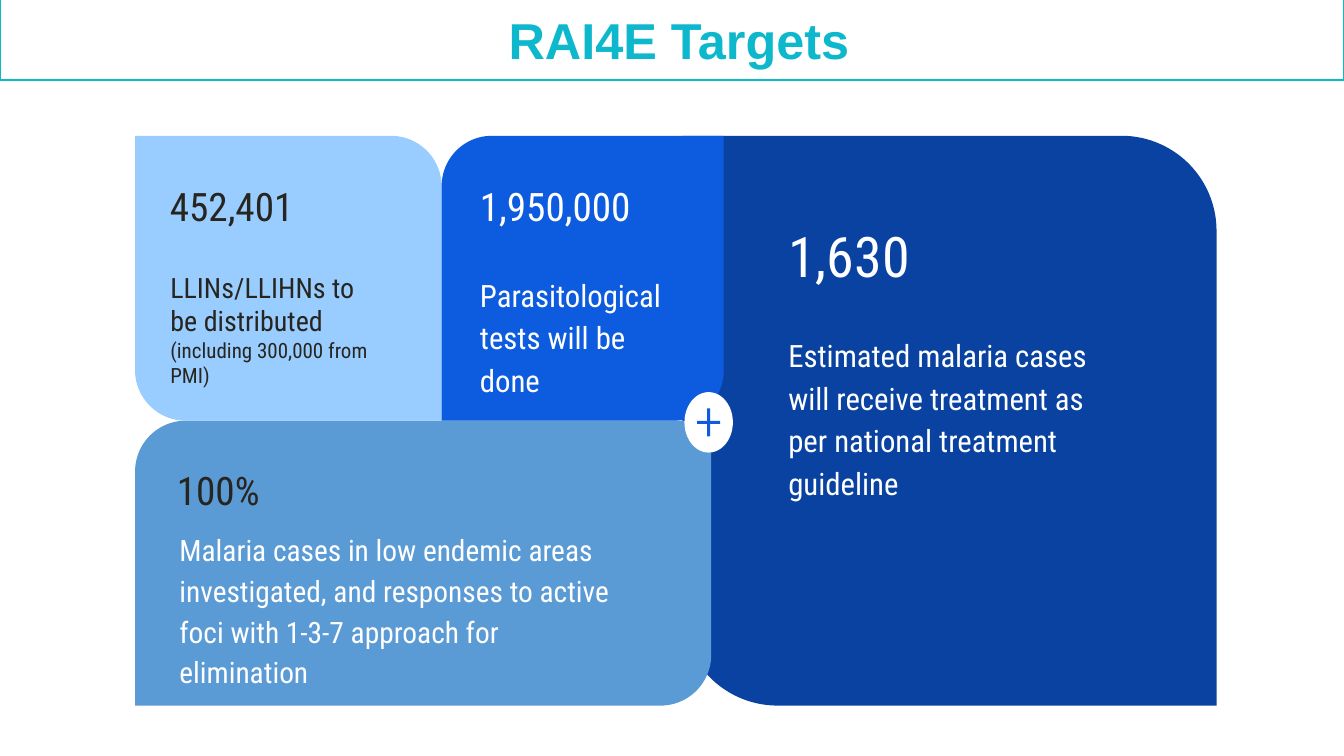
from pptx import Presentation
from pptx.dml.color import RGBColor
from pptx.enum.shapes import MSO_SHAPE
from pptx.enum.text import MSO_ANCHOR, MSO_AUTO_SIZE, PP_ALIGN
from pptx.util import Pt

DIAGONAL = MSO_SHAPE.ROUND_2_DIAG_RECTANGLE
ELLIPSE = MSO_SHAPE.OVAL
PLUS = MSO_SHAPE.MATH_PLUS
TOP = MSO_ANCHOR.TOP
MIDDLE = MSO_ANCHOR.MIDDLE
CENTER = PP_ALIGN.CENTER
LEFT = PP_ALIGN.LEFT
NO_AUTOFIT = MSO_AUTO_SIZE.NONE

TEAL = "0DB8CC"
NAVY = "0942A1"
BLUE = "0D5CDF"
STEEL = "5B9BD5"
SKY = "99CCFF"
WHITE = "FFFFFF"
INK = "27251F"

TITLE_FONT = "Arial"
BODY_FONT = "Roboto Condensed"
ROUNDED = 0.178
RISING = (0, ROUNDED)
FALLING = (ROUNDED, 0)


def color(value):
    return RGBColor.from_string(value)


class TargetSlide:
    def __init__(self, presentation):
        self.slide = presentation.slides.add_slide(presentation.slide_layouts[5])

    def place(self, shape, left, top, width, height):
        shape.left, shape.top = Pt(left), Pt(top)
        shape.width, shape.height = Pt(width), Pt(height)

    def frame(self, shape, inset, anchor):
        text_frame = shape.text_frame
        text_frame.word_wrap = True
        text_frame.auto_size = NO_AUTOFIT
        text_frame.vertical_anchor = anchor
        text_frame.margin_left = text_frame.margin_right = Pt(inset)
        text_frame.margin_top = text_frame.margin_bottom = Pt(inset)
        return text_frame

    def fill_paragraph(self, paragraph, text, size, ink, font=BODY_FONT, bold=False,
                       align=LEFT, spacing=1.0):
        paragraph.text = text
        paragraph.alignment = align
        paragraph.line_spacing = spacing
        paragraph.space_before = paragraph.space_after = Pt(0)
        for run in paragraph.runs:
            run.font.name = font
            run.font.size = Pt(size)
            run.font.bold = bold
            run.font.color.rgb = color(ink)

    def title(self, text, left, top, width, height):
        shape = self.slide.shapes.title
        self.place(shape, left, top, width, height)
        shape.line.color.rgb = color(TEAL)
        shape.line.width = Pt(1.5)
        text_frame = self.frame(shape, 7.2, MIDDLE)
        text_frame.margin_left = Pt(17.2)
        self.fill_paragraph(text_frame.paragraphs[0], text, 36, TEAL,
                            TITLE_FONT, True, CENTER)

    def shape(self, kind, left, top, width, height, fill, adjustments=()):
        shape = self.slide.shapes.add_shape(
            kind, Pt(left), Pt(top), Pt(width), Pt(height))
        shape.shadow.inherit = False
        shape.fill.solid()
        shape.fill.fore_color.rgb = color(fill)
        shape.line.fill.background()
        for index, value in enumerate(adjustments):
            shape.adjustments[index] = value

    def text(self, left, top, width, height, lines, ink, spacing=1.0):
        box = self.slide.shapes.add_textbox(Pt(left), Pt(top), Pt(width), Pt(height))
        text_frame = self.frame(box, 9.4, TOP)
        for index, (text, size) in enumerate(lines):
            paragraph = text_frame.add_paragraph() if index else text_frame.paragraphs[0]
            self.fill_paragraph(paragraph, text, size, ink, spacing=spacing)


def main():
    presentation = Presentation()
    presentation.slide_width, presentation.slide_height = Pt(960), Pt(540)
    targets = TargetSlide(presentation)
    targets.title("RAI4E Targets", 0, -0.7, 960, 58)

    left, top, row = 96.5, 97, 203.5
    nets_width = 219
    tests_left = left + nets_width

    targets.shape(DIAGONAL, 487.5, top, 381.5, 2 * row, NAVY, RISING)
    targets.text(553.7, 149, 209.5, 78.5, [("1,630", 40)], WHITE)
    targets.text(553.7, 227.5, 248.4, 146, [
        ("Estimated malaria cases will receive treatment as per national "
         "treatment guideline", 22)], WHITE, 1.15)

    targets.shape(DIAGONAL, left, top + row, 411.5, row, STEEL, FALLING)
    targets.text(118.8, 367.2, 332, 66.2, [
        ("Malaria cases in low endemic areas investigated, and responses to "
         "active foci with 1-3-7 approach for elimination", 21)], WHITE, 1.15)

    targets.shape(DIAGONAL, left, top, nets_width, row, SKY, RISING)
    targets.text(111.9, 121, 153.4, 59.8, [("452,401", 28)], INK)
    targets.text(112.3, 183.6, 172, 66.2, [
        ("LLINs/LLIHNs to be distributed", 20),
        ("(including 300,000 from PMI)", 15)], INK)
    targets.text(116.9, 324, 150.5, 59.8, [("100%", 28)], INK)

    targets.shape(DIAGONAL, tests_left, top, 201.5, row, BLUE, FALLING)
    targets.text(333.4, 184.3, 170, 66.2, [
        ("Parasitological tests will be done", 22)], WHITE, 1.15)
    targets.text(333.4, 121, 150.5, 59.8, [("1,950,000", 28)], WHITE)

    targets.shape(ELLIPSE, 488.9, 280.1, 34.6, 43.2, WHITE)
    targets.shape(PLUS, 495.1, 288, 22.2, 27.4, BLUE, (0.099,))

    presentation.save("out.pptx")


if __name__ == "__main__":
    main()
